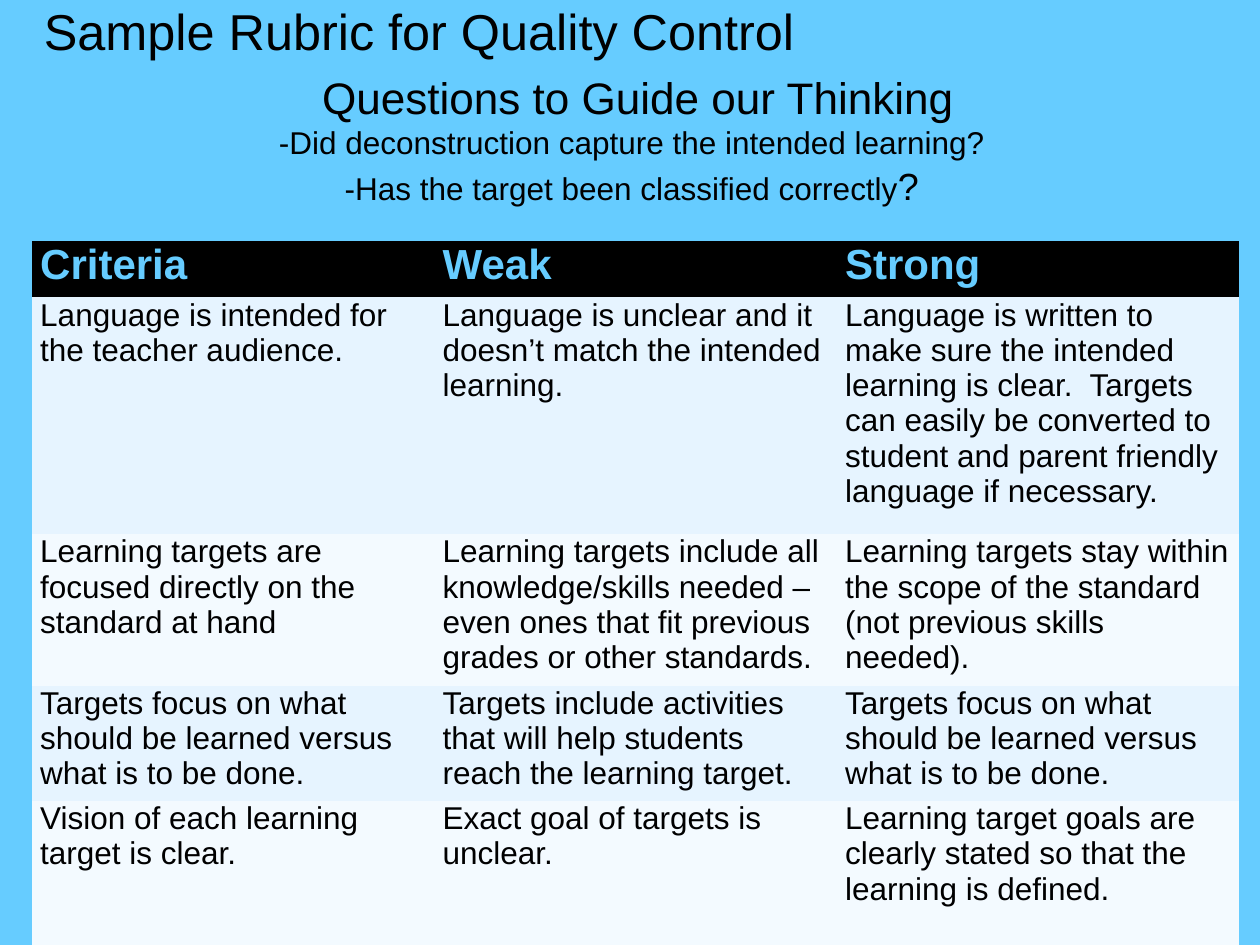
from pptx import Presentation
from pptx.dml.color import RGBColor
from pptx.enum.text import MSO_ANCHOR, PP_ALIGN
from pptx.oxml.ns import qn
from pptx.util import Pt

SKY, BLACK = "66CCFF", "000000"
BANDS = ("E6F4FF", "F3FAFF")
PLAIN_TABLE = "{2D5ABB26-0587-4C30-8999-92F81FD0307C}"

HEADING = [
    (PP_ALIGN.LEFT, 0, 0, [("Sample Rubric for Quality Control", 28.8)]),
    (PP_ALIGN.CENTER, 5.5, 7, [("Questions to Guide our Thinking", 25.2)]),
    (PP_ALIGN.CENTER, 0, 0, [("-Did deconstruction capture the intended learning?", 18)]),
    (PP_ALIGN.CENTER, 1, 0, [("-Has the target been classified correctly", 18), ("?", 21.6)]),
]

RUBRIC = [
    ("Criteria", "Weak", "Strong"),
    ("Language is intended for the teacher audience.",
     "Language is unclear and it doesn’t match the intended learning.",
     "Language is written to make sure the intended learning is clear.  Targets can easily be "
     "converted to student and parent friendly language if necessary."),
    ("Learning targets are focused directly on the standard at hand",
     "Learning targets include all knowledge/skills needed – even ones that fit previous "
     "grades or other standards.",
     "Learning targets stay within the scope of the standard (not previous skills needed)."),
    ("Targets focus on what should be learned versus what is to be done.",
     "Targets include activities that will help students reach the learning target.",
     "Targets focus on what should be learned versus what is to be done."),
    ("Vision of each learning target is clear.",
     "Exact goal of targets is unclear.",
     "Learning target goals are clearly stated so that the learning is defined."),
]
ROW_HEIGHTS = (32, 135.4, 84.5, 65.9, 84.5)


def colour(value):
    return RGBColor.from_string(value)


def apply(target, values):
    for name, value in values.items():
        setattr(target, name, value)


class RubricSlide:
    font = "Arial"

    def __init__(self, slide, background):
        self.slide = slide
        slide.background.fill.solid()
        slide.background.fill.fore_color.rgb = colour(background)

    def add_words(self, paragraph, text, size, ink, bold=False):
        run = paragraph.add_run()
        run.text = text
        apply(run.font, {"name": self.font, "size": Pt(size), "bold": bold})
        run.font.color.rgb = colour(ink)

    def heading(self, left, top, width, height, lines):
        frame = self.slide.shapes.add_textbox(Pt(left), Pt(top), Pt(width), Pt(height)).text_frame
        apply(frame, {"word_wrap": True, "vertical_anchor": MSO_ANCHOR.TOP,
                      "margin_left": Pt(7.2), "margin_right": Pt(7.2),
                      "margin_top": 0, "margin_bottom": 0})
        for index, (alignment, gap, indent, parts) in enumerate(lines):
            line = frame.add_paragraph() if index else frame.paragraphs[0]
            line.alignment = alignment
            if gap:
                line.space_before = Pt(gap)
            if indent:
                line._p.get_or_add_pPr().set("marL", str(Pt(indent)))
            for text, size in parts:
                self.add_words(line, text, size, BLACK)

    def rubric(self, left, top, width, heights, rows):
        table = self.slide.shapes.add_table(
            len(rows), len(rows[0]), Pt(left), Pt(top), Pt(width), Pt(sum(heights))).table
        table._tbl.tblPr.find(qn("a:tableStyleId")).text = PLAIN_TABLE
        for row_index, (height, entries) in enumerate(zip(heights, rows)):
            table.rows[row_index].height = Pt(height)
            is_header = row_index == 0
            fill = BLACK if is_header else BANDS[(row_index - 1) % 2]
            for column_index, entry in enumerate(entries):
                cell = table.cell(row_index, column_index)
                apply(cell, {"margin_left": Pt(5), "margin_right": Pt(5),
                             "margin_top": 0, "margin_bottom": 0})
                cell.fill.solid()
                cell.fill.fore_color.rgb = colour(fill)
                self.add_words(cell.text_frame.paragraphs[0], entry, 24 if is_header else 18,
                               SKY if is_header else BLACK, is_header)


def main():
    deck = Presentation()
    apply(deck, {"slide_width": Pt(720), "slide_height": Pt(540)})
    page = RubricSlide(deck.slides.add_slide(deck.slide_layouts[6]), SKY)
    page.heading(18, 0, 686, 144, HEADING)
    page.rubric(18, 138, 690, ROW_HEIGHTS, RUBRIC)
    deck.save("out.pptx")


if __name__ == "__main__":
    main()
